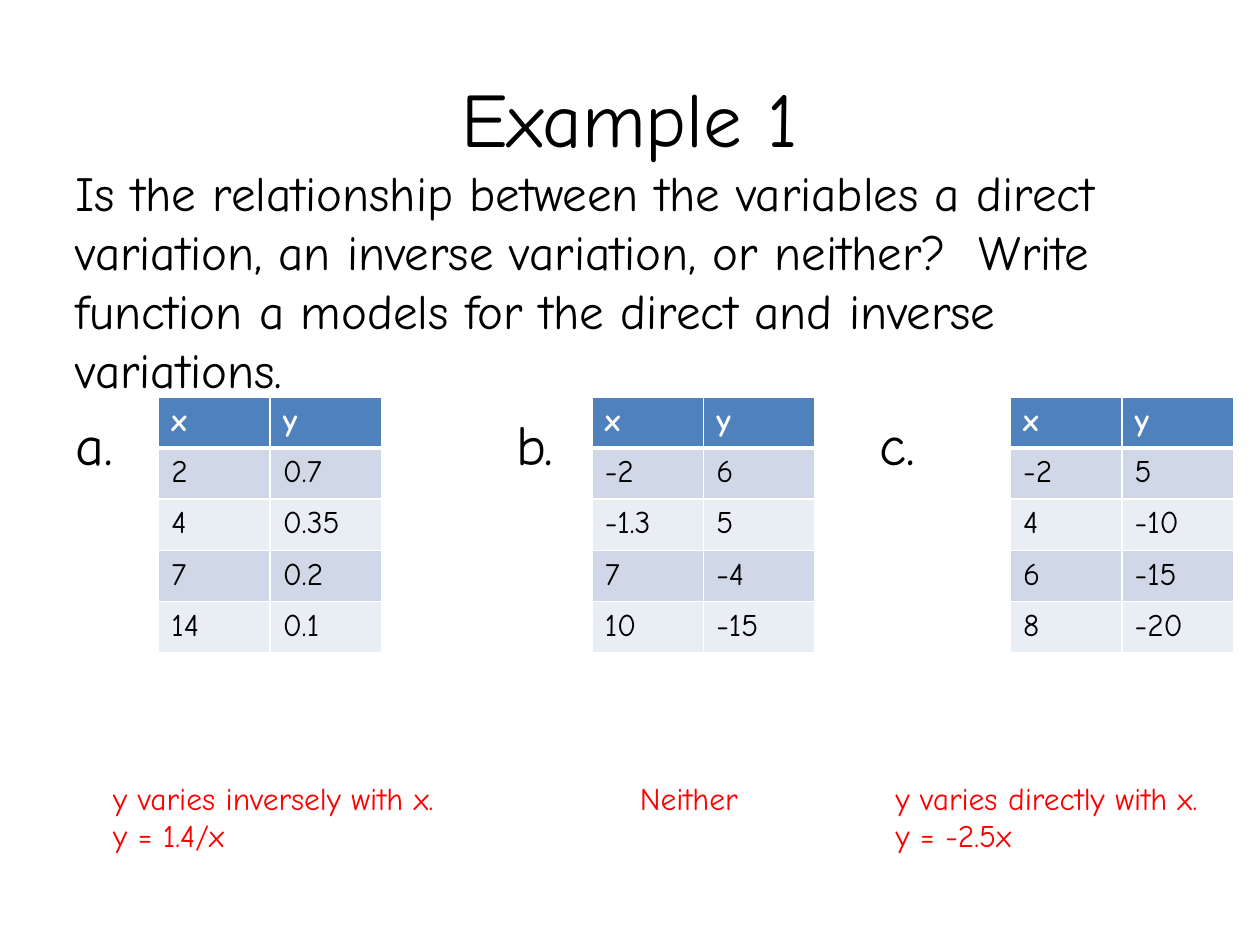
from lxml import etree
from pptx import Presentation
from pptx.dml.color import RGBColor
from pptx.enum import text
from pptx.oxml.ns import qn
from pptx.util import Inches, Pt

FONT = "Comic Neue"
BLACK, WHITE, RED = "000000", "FFFFFF", "FF0000"
HEADER_FILL, BAND_FILLS = "4F81BD", ("D0D8E8", "E9EDF4")

QUESTION = ("Is the relationship between the variables a direct variation, "
            "an inverse variation, or neither?  Write function a models for "
            "the direct and inverse variations.")

# letter and its left edge, left edge of table, points,
# left edge and width of answer, answer
PROBLEMS = [
    ("a.", 0.5, 1.26, [("2", "0.7"), ("4", "0.35"), ("7", "0.2"), ("14", "0.1")],
     0.8, 3.11, "y varies inversely with x.\ny = 1.4/x"),
    ("b.", 4, 4.7, [("-2", "6"), ("-1.3", "5"), ("7", "-4"), ("10", "-15")],
     4.98, 1.14, "Neither"),
    ("c.", 6.88, 8.02, [("-2", "5"), ("4", "-10"), ("6", "-15"), ("8", "-20")],
     7.01, 2.99, "y varies directly with x.\ny = -2.5x"),
]


def rgb(value):
    return RGBColor.from_string(value)


def style(paragraph, size, color, bold=False):
    for run in paragraph.runs:
        run.font.name = FONT
        run.font.size = Pt(size)
        run.font.bold = bold
        run.font.color.rgb = rgb(color)


def place(shape, left, top, width, height):
    shape.left, shape.top = Inches(left), Inches(top)
    shape.width, shape.height = Inches(width), Inches(height)


def format_title(title, *box):
    place(title, *box)
    title.text_frame.text = "Example 1"
    title.text_frame.vertical_anchor = text.MSO_ANCHOR.MIDDLE
    heading = title.text_frame.paragraphs[0]
    heading.alignment = text.PP_ALIGN.CENTER
    style(heading, 44, BLACK)


def format_question(body, *box):
    place(body, *box)
    body.text_frame.text = QUESTION
    question = body.text_frame.paragraphs[0]
    style(question, 28, BLACK)
    properties = question._p.get_or_add_pPr()
    properties.set("marL", "0")
    properties.set("indent", "0")
    etree.SubElement(properties, qn("a:buNone"))


def add_text(slide, content, size, color, left, top, width, height):
    box = slide.shapes.add_textbox(
        Inches(left), Inches(top), Inches(width), Inches(height))
    frame = box.text_frame
    frame.word_wrap = False
    frame.auto_size = text.MSO_AUTO_SIZE.SHAPE_TO_FIT_TEXT
    frame.text = content
    for paragraph in frame.paragraphs:
        style(paragraph, size, color)


def underline_cell(cell, color, points):
    """Give the cell a bottom border, which must precede its fill."""
    border = etree.Element(qn("a:lnB"), w=str(int(Pt(points))))
    fill = etree.SubElement(border, qn("a:solidFill"))
    etree.SubElement(fill, qn("a:srgbClr"), val=color)
    cell._tc.get_or_add_tcPr().insert(0, border)


def add_points_table(slide, points, left, top, width, height):
    rows = [("x", "y")] + points
    table = slide.shapes.add_table(
        len(rows), 2, Inches(left), Inches(top), Inches(width), Inches(height)).table
    for r, values in enumerate(rows):
        header = r == 0
        for c, value in enumerate(values):
            cell = table.cell(r, c)
            cell.text_frame.text = value
            style(cell.text_frame.paragraphs[0], 18, WHITE if header else BLACK, header)
            cell.fill.solid()
            cell.fill.fore_color.rgb = rgb(HEADER_FILL if header else BAND_FILLS[(r - 1) % 2])
            if header:
                underline_cell(cell, WHITE, 3)


def main():
    prs = Presentation()
    prs.slide_width, prs.slide_height = Inches(10), Inches(7.5)
    slide = prs.slides.add_slide(prs.slide_layouts[1])
    format_title(slide.shapes.title, 0.5, 0.3, 9, 1.25)
    format_question(slide.placeholders[1], 0.5, 1.24, 9, 5.46)
    for (letter, letter_left, table_left, points,
         answer_left, answer_width, answer) in PROBLEMS:
        add_text(slide, letter, 32, BLACK, letter_left, 3.2, 0.5, 0.63)
        add_points_table(slide, points, table_left, 3.15, 1.77, 2.03)
        answer_height = 0.1 + 0.3 * len(answer.splitlines())
        add_text(slide, answer, 18, RED, answer_left, 6.13, answer_width, answer_height)
    prs.save("out.pptx")


if __name__ == "__main__":
    main()
